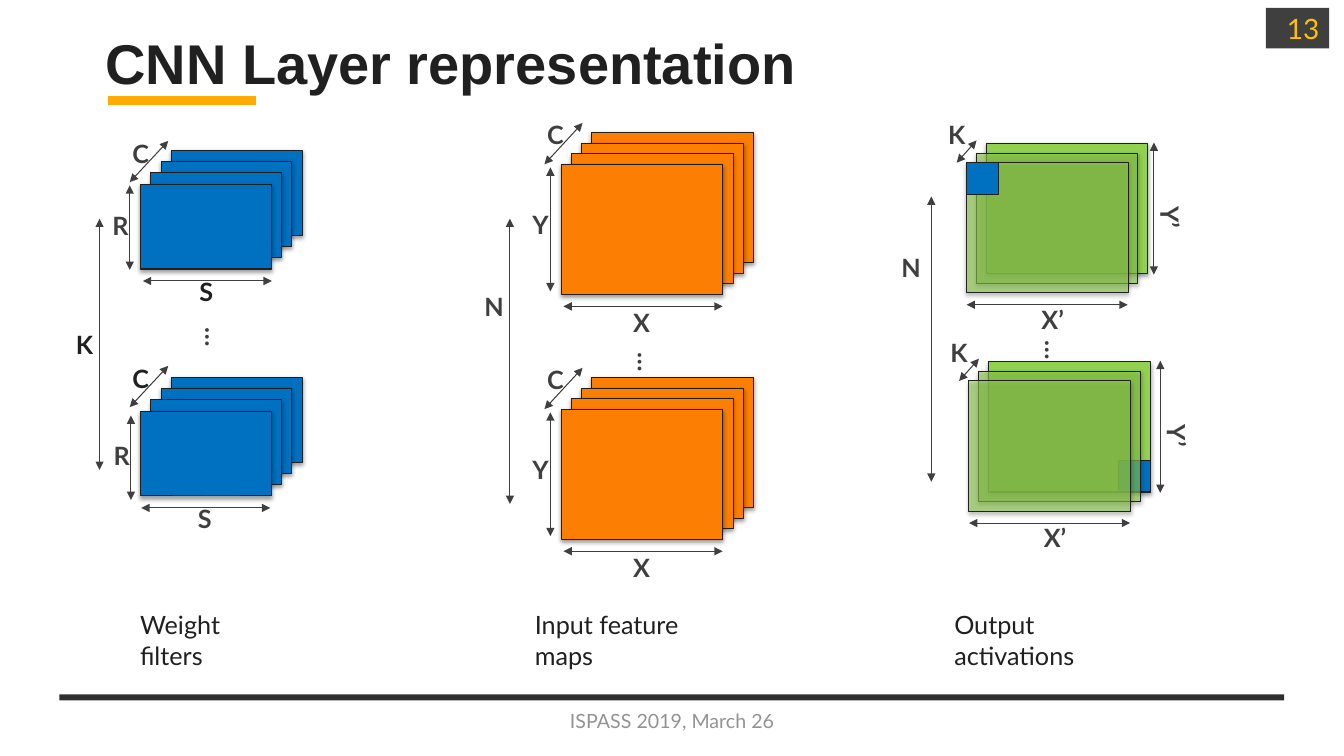
"""Builds the slide on CNN layer representation, with lengths in centimetres."""
from lxml.etree import SubElement
from pptx import Presentation
from pptx.dml.color import RGBColor
from pptx.enum.shapes import MSO_CONNECTOR, MSO_SHAPE
from pptx.enum.text import MSO_ANCHOR, PP_ALIGN
from pptx.oxml.ns import qn
from pptx.util import Cm, Pt

INK, GREY, BLUE, ORANGE, GREEN = "202020", "3F3F3F", "0070C0", "FC7F03", "92D050"
LABEL_HEIGHT, LETTER, PATCH = 0.94, 0.76, 0.8

TITLE = ("CNN Layer representation", (2.41, 0.79, 26.09, 1.75))
FOOTER = ("ISPASS 2019, March 26", (13.13, 17.65, 7.62, 1.02))
PAGE = ("13", (31.9, 0.2, 1.6, 1.02))
TITLE_ACCENT = ((2.72, 2.54), (6.45, 2.54))
FOOTER_BAR = (1.5, 17.5, 30.86, 0.15)

# Each dimension: label, width, rotation, label centre, arrow start, arrow end
GROUPS = [
    {"caption": ("Weight filters", (3.28, 15.24, 4.19, 1.02)),
     "color": BLUE, "size": (3.3, 2.14), "step": (0.255, -0.285), "sheets": 4, "opacity": 100,
     "dimensions": [("C", LETTER, 0, (0, -0.72), (-0.28, -0.05), (0.69, -1.09)),
                    ("R", LETTER, 0, (-0.51, 1.08), (-0.28, 2.16), (-0.28, 0.03)),
                    ("S", LETTER, 0, (1.65, 2.76), (3.3, 2.44), (0.05, 2.44))],
     "stacks": [{"front": (3.55, 4.64), "dark": "S", "nudge": {}},
                {"front": (3.55, 10.36), "dark": "C",
                 "nudge": {"C": (0, -0.05), "R": (0.03, 0.08), "S": (-0.04, 0)}}],
     "span": ("K", INK, (2.13, 8.72), (2.51, 11.84), (2.51, 5.51)),
     "ellipsis": (5.38, 8.5)},
    {"caption": ("Input feature maps", (13.23, 15.24, 5.46, 1.02)),
     "color": ORANGE, "size": (4.07, 3.28), "step": (0.255, -0.265), "sheets": 4, "opacity": 100,
     "dimensions": [("C", LETTER, 0, (-0.15, -0.7), (-0.43, 0), (0.53, -1.04)),
                    ("Y", LETTER, 0, (-0.53, 1.56), (-0.28, 3.2), (-0.28, 0.08)),
                    ("X", LETTER, 0, (2.02, 4.03), (4.06, 3.58), (0.05, 3.58))],
     "stacks": [{"front": (14.15, 4.14), "dark": "", "nudge": {}},
                {"front": (14.15, 10.31), "dark": "", "nudge": {}}],
     "span": ("N", GREY, (12.45, 7.76), (12.85, 12.7), (12.85, 5.51)),
     "ellipsis": (16.28, 9.13)},
    {"caption": ("Output activations", (23.8, 15.24, 5.46, 1.02)),
     "color": GREEN, "size": (4.07, 3.28), "step": (0.25, -0.24), "sheets": 3, "opacity": 60,
     "dimensions": [("K", LETTER, 0, (-0.25, -0.67), (-0.25, 0), (0.25, -0.56)),
                    ("Y’", 4.9, 90, (5.09, 1.38), (4.72, 2.82), (4.72, -0.51)),
                    ("X’", 1.3, 0, (2.17, 4), (4.06, 3.58), (0, 3.58))],
     "stacks": [{"front": (24.36, 4.1), "dark": "", "nudge": {}, "patch": "front"},
                {"front": (24.42, 9.6), "dark": "", "nudge": {"Y’": (0.1, 0)}, "patch": "back"}],
     "span": ("N", GREY, (22.96, 6.79), (23.47, 12.14), (23.47, 4.95)),
     "ellipsis": (26.54, 8.83)},
]

deck = Presentation()
deck.slide_width, deck.slide_height = Cm(33.87), Cm(19.05)
slide = deck.slides.add_slide(deck.slide_layouts[6])


def paint(target, color):
    target.rgb = RGBColor.from_string(color)


def cm(lengths):
    return [Cm(length) for length in lengths]


def shift(point, offset, times=1):
    return tuple(a + b * times for a, b in zip(point, offset))


def add_rect(box, fill, outline=None, opacity=100, shadow=False):
    rect = slide.shapes.add_shape(MSO_SHAPE.RECTANGLE, *cm(box))
    rect.shadow.inherit = False
    rect.fill.solid()
    paint(rect.fill.fore_color, fill)
    if outline:
        paint(rect.line.color, outline)
        rect.line.width = Pt(0.75)
    else:
        rect.line.fill.background()
    properties = rect.fill._xPr
    if opacity < 100:
        tint = properties.find(qn("a:solidFill"))[0]
        SubElement(tint, qn("a:alpha"), val=str(opacity * 1000))
    if shadow:
        outer = SubElement(properties.find(qn("a:effectLst")), qn("a:outerShdw"), blurRad="40000",
                           dist="20000", dir="5400000", rotWithShape="0")
        black = SubElement(outer, qn("a:srgbClr"), val="000000")
        SubElement(black, qn("a:alpha"), val="38000")
    return rect


def add_line(start, end, color, width, arrows=False):
    line = slide.shapes.add_connector(MSO_CONNECTOR.STRAIGHT, *cm(start + end))
    paint(line.line.color, color)
    line.line.width = Pt(width)
    if arrows:
        for tip in ("a:headEnd", "a:tailEnd"):
            SubElement(line.line._get_or_add_ln(), qn(tip), type="triangle")
    SubElement(line._element.spPr, qn("a:effectLst"))


def write(holder, text, color, frame=None, paragraph=None, font=None):
    body = holder.text_frame
    body.text = text
    words = body.paragraphs[0]
    styles = [(body, {"word_wrap": True} | (frame or {})),
              (words, paragraph or {}),
              (words.runs[0].font, {"name": "Lato", "size": Pt(18)} | (font or {}))]
    for target, values in styles:
        for name, value in values.items():
            setattr(target, name, value)
    paint(words.runs[0].font.color, color)


def add_text(text, box, color, **styles):
    holder = slide.shapes.add_textbox(*cm(box))
    write(holder, text, color, **styles)
    return holder


def add_label(text, centre, width=LETTER, rotation=0, color=GREY):
    left, top = shift(centre, (width, LABEL_HEIGHT), -0.5)
    label = add_text(text, (left, top, width, LABEL_HEIGHT), color,
                     frame={"word_wrap": False, "margin_left": 0, "margin_right": 0,
                            "vertical_anchor": MSO_ANCHOR.MIDDLE},
                     paragraph={"alignment": PP_ALIGN.CENTER, "line_spacing": 0.9},
                     font={"bold": True})
    label.rotation = rotation


def add_stack(group, stack):
    front, size = stack["front"], group["size"]
    last = group["sheets"] - 1
    for depth in range(last, -1, -1):
        corner = shift(front, group["step"], depth)
        opacity = 100 if depth == last else group["opacity"]
        add_rect(corner + size, group["color"], INK, opacity, shadow=True)
        if stack.get("patch") == "back" and depth == last:
            patch_corner = shift(shift(corner, size), (PATCH, PATCH), -1)
            add_rect(patch_corner + (PATCH, PATCH), BLUE, INK)
    if stack.get("patch") == "front":
        add_rect(front + (PATCH, PATCH), BLUE, INK)
    for text, width, rotation, centre, start, end in group["dimensions"]:
        origin = shift(front, stack["nudge"].get(text, (0, 0)))
        add_line(shift(origin, start), shift(origin, end), GREY, 0.75, arrows=True)
        color = INK if text == stack["dark"] else GREY
        add_label(text, shift(origin, centre), width, rotation, color)


add_line(*TITLE_ACCENT, "FFAB03", 6.25)
add_rect(FOOTER_BAR, "2F2F2F")
add_text(*TITLE, INK, frame={"vertical_anchor": MSO_ANCHOR.MIDDLE},
         paragraph={"line_spacing": 0.9}, font={"name": "Arial", "size": Pt(40), "bold": True})
add_text(*FOOTER, "939393", frame={"vertical_anchor": MSO_ANCHOR.MIDDLE},
         paragraph={"alignment": PP_ALIGN.CENTER}, font={"size": Pt(14)})
page_number, page_box = PAGE
write(add_rect(page_box, GREY), page_number, "FFC000",
      frame={"vertical_anchor": MSO_ANCHOR.MIDDLE},
      paragraph={"alignment": PP_ALIGN.RIGHT}, font={"size": Pt(20)})

for group in GROUPS:
    for stack in group["stacks"]:
        add_stack(group, stack)
    span_label, span_color, span_centre, span_start, span_end = group["span"]
    add_line(span_start, span_end, GREY, 0.75, arrows=True)
    add_label(span_label, span_centre, color=span_color)
    add_label("…", group["ellipsis"], rotation=90)
    add_text(*group["caption"], INK)

deck.save("out.pptx")
